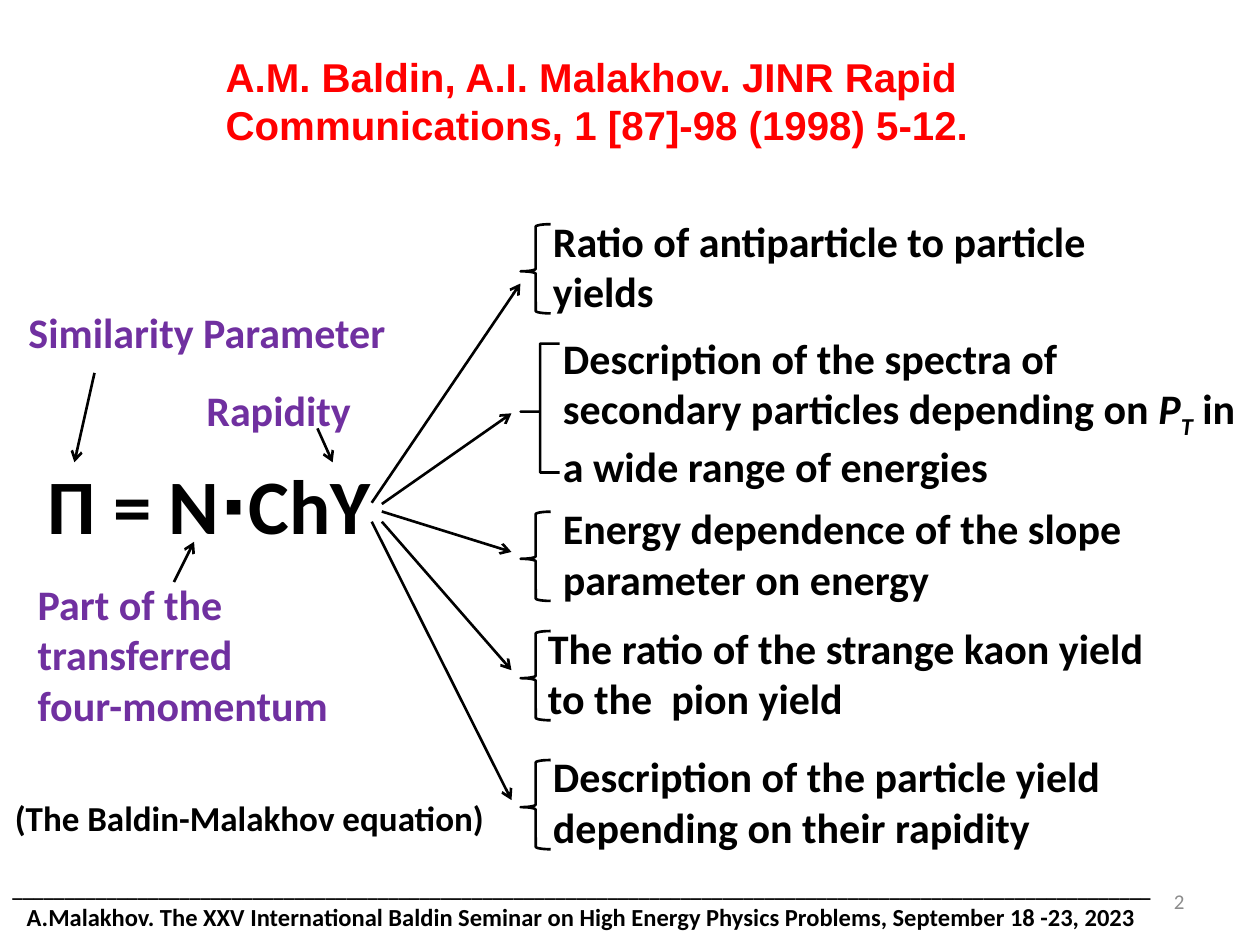
from lxml.etree import SubElement
from pptx import Presentation
from pptx.dml.color import RGBColor
from pptx.enum.shapes import MSO_CONNECTOR, MSO_SHAPE
from pptx.enum.text import MSO_ANCHOR, MSO_AUTO_SIZE, PP_ALIGN
from pptx.oxml.ns import qn
from pptx.util import Pt

BLACK, PURPLE, RED, GRAY = "000000", "7030A0", "FF0000", "8C8C8C"
BODY = {"name": "Calibri", "size": 24, "bold": True, "color": BLACK}
LABEL = BODY | {"color": PURPLE}
ITALIC = {"italic": True}
SUBSCRIPT = {"italic": True, "baseline": "-25000"}

TITLE = "A.M. Baldin, A.I. Malakhov. JINR Rapid Communications, 1 [87]-98 (1998) 5-12."
TITLE_BOX = (121.7, 26, 453.6, 63.4)
TITLE_FORMAT = {"name": "Arial", "size": 23, "bold": True, "color": RED}

LABELS = [
    (["П = N∙ChY"], (20, 257.8, 203.8, 60.5), BODY | {"size": 44}, True),
    (["Similarity Parameter"], (9.2, 171.4, 220.3, 36), LABEL, False),
    (["Part of the transferred", "four-momentum"], (14.4, 326.9, 209.5, 94.3), LABEL, True),
    (["Rapidity"], (110.9, 216, 113, 36), LABEL, True),
    (["(The Baldin-Malakhov equation)"], (1.4, 451.4, 285.1, 31.7), BODY | {"size": 20}, False),
]
LABEL_ARROWS = [
    ((54, 213.1), (42.5, 264.2)),
    ((99.4, 332.6), (110.9, 309.6)),
    ((181.4, 244.8), (190.1, 264.2)),
]

BRACE_LEFT = 297.5
BRACE = {"width": 17.2, "height": 51, "curve": 0.083}
WIDE_BRACE = {"width": 22.3, "height": 73.6, "curve": 0}
BRANCHES = [
    {"runs": [("Ratio of antiparticle to particle yields", {})],
     "box": (308.9, 119.5, 374.4, 65.5), "brace_top": 128.1, "brace": BRACE,
     "arrow": ((212.4, 287.3), (297.4, 162))},
    {"runs": [("Description of the spectra of secondary particles depending on ", {}),
              ("P", ITALIC), ("T", SUBSCRIPT), (" in a wide range of energies", {})],
     "box": (314.6, 186.5, 402.5, 94.3), "brace_top": 196.4, "brace": WIDE_BRACE,
     "arrow": ((218.2, 288), (292.3, 236.2))},
    {"runs": [("Energy dependence of the slope parameter on energy", {})],
     "box": (314.6, 283.7, 357.1, 65.5), "brace_top": 292.4, "brace": BRACE,
     "arrow": ((218.2, 292.3), (292.3, 315.4))},
    {"runs": [("The ratio of the strange kaon yield to the  pion yield", {})],
     "box": (306, 352.1, 377.3, 65.5), "brace_top": 360.6, "brace": BRACE,
     "arrow": ((218.2, 298.1), (292.3, 383))},
    {"runs": [("Description of the particle yield depending on their rapidity", {})],
     "box": (308.9, 425.5, 380.2, 65.5), "brace_top": 434.3, "brace": BRACE,
     "arrow": ((212.4, 298.1), (292.3, 457.2))},
]

FOOTER = "A.Malakhov. The XXV International Baldin Seminar on High Energy Physics Problems, September 18 -23, 2023"
FOOTER_BOX = (0, 497.5, 671.8, 38.9)
FOOTER_INDENT = 8.2
RULE_LENGTH = 109
NUMBER_BOX = (516.2, 500.4, 167.8, 28.8)


def color(value):
    return RGBColor.from_string(value)


def points(values):
    return [Pt(value) for value in values]


def add_run(paragraph, text, values):
    run = paragraph.add_run()
    run.text = text
    for name, value in values.items():
        if name == "color":
            run.font.color.rgb = color(value)
        elif name == "baseline":
            run.font._element.set("baseline", value)
        else:
            setattr(run.font, name, Pt(value) if name == "size" else value)


def fill_text(shape, paragraphs, wrap=True, anchor=MSO_ANCHOR.TOP, alignment=PP_ALIGN.LEFT):
    """Write paragraphs, each a list of (text, format) runs, into a shape."""
    frame = shape.text_frame
    frame.word_wrap = wrap
    frame.auto_size = MSO_AUTO_SIZE.NONE
    frame.vertical_anchor = anchor
    for index, runs in enumerate(paragraphs):
        paragraph = frame.add_paragraph() if index else frame.paragraphs[0]
        paragraph.alignment = alignment
        for text, values in runs:
            add_run(paragraph, text, values)
    return frame


def add_text(slide, box, paragraphs, **options):
    return fill_text(slide.shapes.add_textbox(*points(box)), paragraphs, **options)


def add_arrow(slide, start, end):
    arrow = slide.shapes.add_connector(MSO_CONNECTOR.STRAIGHT, *points(start + end))
    arrow.line.color.rgb = color(BLACK)
    arrow.line.width = Pt(1.5)
    SubElement(arrow.line._get_or_add_ln(), qn("a:tailEnd"), type="arrow")
    SubElement(arrow._element.spPr, qn("a:effectLst"))


def add_brace(slide, top, width, height, curve):
    box = points((BRACE_LEFT, top, width, height))
    brace = slide.shapes.add_shape(MSO_SHAPE.LEFT_BRACE, *box)
    brace.adjustments[0] = curve
    brace.adjustments[1] = 0.528
    brace.shadow.inherit = False
    brace.fill.background()
    brace.line.color.rgb = color(BLACK)
    brace.line.width = Pt(1.5)


def main():
    presentation = Presentation()
    presentation.slide_width, presentation.slide_height = Pt(720), Pt(540)
    slide = presentation.slides.add_slide(presentation.slide_layouts[5])

    title = slide.shapes.title
    title.left, title.top, title.width, title.height = points(TITLE_BOX)
    fill_text(title, [[(TITLE, TITLE_FORMAT)]])

    for lines, box, values, wrap in LABELS:
        add_text(slide, box, [[(line, values)] for line in lines], wrap=wrap)
    for start, end in LABEL_ARROWS:
        add_arrow(slide, start, end)

    for branch in BRANCHES:
        runs = [(text, BODY | extra) for text, extra in branch["runs"]]
        add_text(slide, branch["box"], [runs])
        add_brace(slide, branch["brace_top"], **branch["brace"])
        add_arrow(slide, *branch["arrow"])

    number_format = {"name": "Calibri", "size": 12, "color": GRAY}
    add_text(slide, NUMBER_BOX, [[("2", number_format)]],
             anchor=MSO_ANCHOR.MIDDLE, alignment=PP_ALIGN.RIGHT)
    footer = add_text(slide, FOOTER_BOX, [[("_" * RULE_LENGTH, BODY | {"size": 12})],
                                         [(FOOTER, BODY | {"size": 14})]],
                      alignment=PP_ALIGN.JUSTIFY)
    footer.paragraphs[1]._p.get_or_add_pPr().set("marL", str(Pt(FOOTER_INDENT)))

    presentation.save("out.pptx")


if __name__ == "__main__":
    main()
